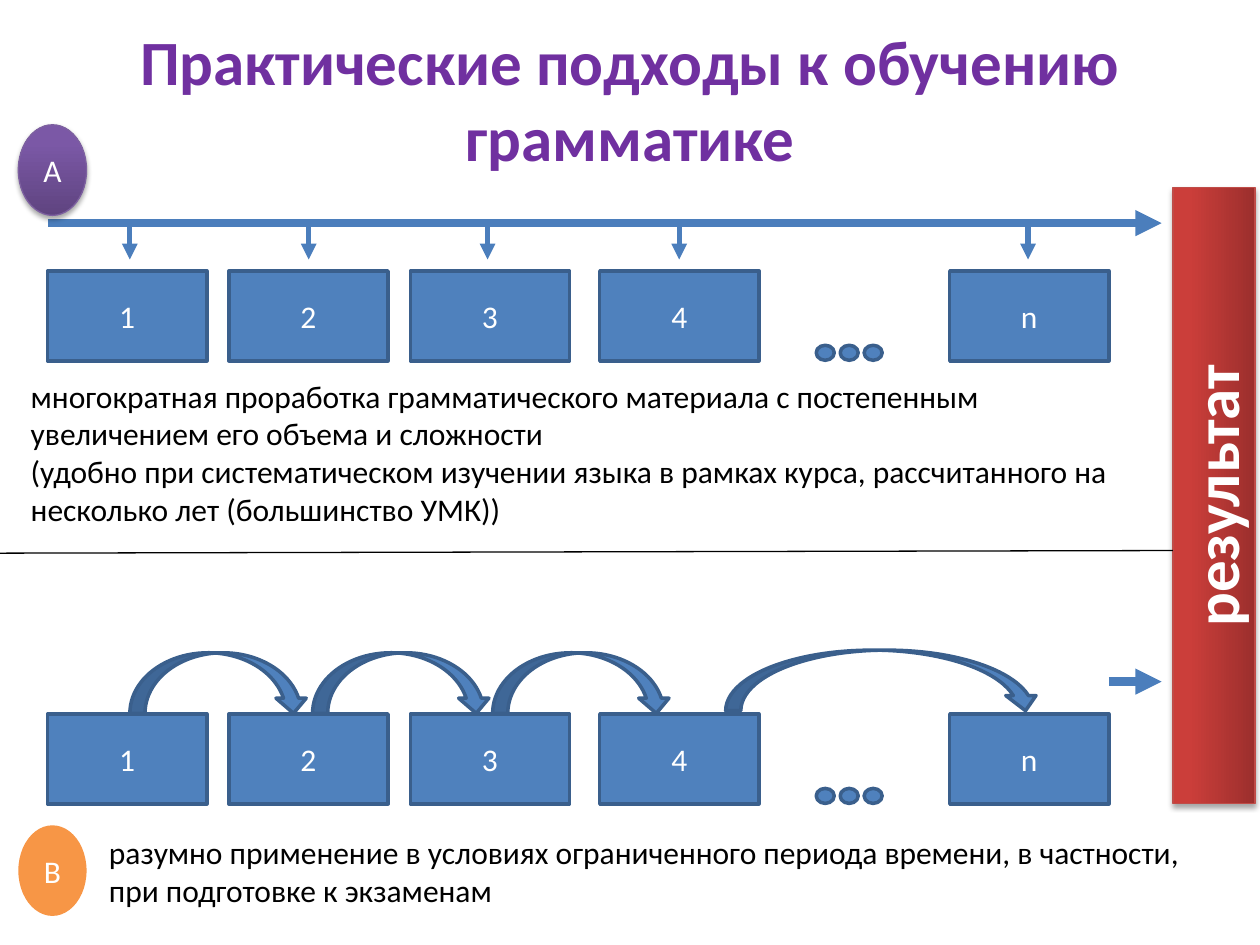
from lxml.etree import SubElement
from pptx import Presentation
from pptx.dml.color import RGBColor
from pptx.enum.shapes import MSO_CONNECTOR, MSO_SHAPE
from pptx.enum.text import MSO_ANCHOR, MSO_AUTO_SIZE, PP_ALIGN
from pptx.oxml.ns import qn
from pptx.util import Pt


def color(hex_string):
    return RGBColor.from_string(hex_string)


class SlideBuilder:
    font = "Calibri"
    blue, edge, arrow_blue = "4F81BD", "3A5F8C", "4B7EBC"

    def __init__(self, page):
        self.page = page

    def set_text(self, frame, text, size=18, ink="FFFFFF", bold=False, align=PP_ALIGN.CENTER):
        para = frame.paragraphs[0]
        para.text = text
        para.alignment = align
        para.font.name, para.font.size, para.font.bold = self.font, Pt(size), bold
        para.font.color.rgb = color(ink)

    def title(self, text, *bounds):
        title = self.page.shapes.title
        title.left, title.top, title.width, title.height = map(Pt, bounds)
        frame = title.text_frame
        frame.auto_size = MSO_AUTO_SIZE.NONE
        frame.vertical_anchor = MSO_ANCHOR.MIDDLE
        self.set_text(frame, text, 36, "7030A0", True)

    def shape(self, kind, *bounds, fill=blue, line=edge, weight=2, text="", **style):
        shape = self.page.shapes.add_shape(kind, *map(Pt, bounds))
        shape.shadow.inherit = False
        shape.fill.solid()
        shape.fill.fore_color.rgb = color(fill)
        if line:
            shape.line.color.rgb = color(line)
            shape.line.width = Pt(weight)
        else:
            shape.line.fill.background()
        if text:
            shape.text_frame.vertical_anchor = MSO_ANCHOR.MIDDLE
            self.set_text(shape.text_frame, text, **style)
        return shape

    def glossy(self, kind, *bounds, dark, light, line, **style):
        """Add a shape with an upward gradient and a soft shadow below it."""
        shape = self.shape(kind, *bounds, line=line, weight=0.75, **style)
        shape.fill.gradient()
        shape.fill.gradient_angle = 90
        for stop, tone, position in zip(shape.fill.gradient_stops, (dark, light), (0, 0.8)):
            stop.color.rgb = color(tone)
            stop.position = position
        effects = shape.element.spPr.find(qn("a:effectLst"))
        shadow = SubElement(effects, qn("a:outerShdw"), blurRad=str(Pt(3.1)),
                            dist=str(Pt(1.8)), dir="5400000", rotWithShape="0")
        tone = SubElement(shadow, qn("a:srgbClr"), val="000000")
        SubElement(tone, qn("a:alpha"), val="35000")
        return shape

    def line(self, *ends, ink=arrow_blue, weight=3, arrow=True):
        line = self.page.shapes.add_connector(MSO_CONNECTOR.STRAIGHT, *map(Pt, ends))
        line.line.color.rgb = color(ink)
        line.line.width = Pt(weight)
        properties = line.element.spPr
        if arrow:
            SubElement(properties.find(qn("a:ln")), qn("a:tailEnd"), type="triangle")
        SubElement(properties, qn("a:effectLst"))

    def note(self, text, *bounds, wrap=True):
        box = self.page.shapes.add_textbox(*map(Pt, bounds))
        box.text_frame.word_wrap = wrap
        box.text_frame.auto_size = MSO_AUTO_SIZE.SHAPE_TO_FIT_TEXT
        self.set_text(box.text_frame, text, ink="000000", align=PP_ALIGN.LEFT)

    def step_row(self, top):
        """Add the numbered boxes with an ellipsis of dots before the last."""
        for label, left in zip("1234n", (27.2, 130.8, 234.5, 342.7, 542.7)):
            self.shape(MSO_SHAPE.RECTANGLE, left, top, 91, 51.4, text=label)
        for index in range(3):
            self.shape(MSO_SHAPE.OVAL, 466.4 + 13.7 * index, top + 42.5, 10.3, 8.6)


def main():
    deck = Presentation()
    deck.slide_width, deck.slide_height = Pt(720), Pt(540)
    slide = SlideBuilder(deck.slides.add_slide(deck.slide_layouts[5]))
    slide.title("Практические подходы к обучению грамматике", 49.7, 28.8, 620.6, 54.7)

    slide.step_row(154.8)
    axis = 127.5
    slide.line(27.4, axis, 663.8, axis, weight=5)
    for x in (74.2, 176.4, 278.6, 388.1, 587.5):
        slide.line(x, axis, x, 148.3)

    slide.step_row(408)
    for left, top, width in ((74.2, 373, 102.2), (178.6, 373, 102.2),
                             (281.5, 373, 102.2), (414.7, 371.5, 180)):
        slide.shape(MSO_SHAPE.CURVED_DOWN_ARROW, left, top, width, 34.6)
    slide.line(633.6, 389.5, 663.8, 389.5, weight=5)

    result = slide.glossy(MSO_SHAPE.RECTANGLE, 517.7, 259.9, 352, 46.8, dark="9C2F2D",
                          light="CB3E3A", line="BF4C48", text="результат", size=36, bold=True)
    result.rotation = 270
    slide.glossy(MSO_SHAPE.OVAL, 10.5, 71.3, 39, 51.8, dark="5F4480", light="7B58A6",
                 line="7D60A0", text="А")
    slide.shape(MSO_SHAPE.OVAL, 10.5, 471.6, 39, 51.8, fill="F79646", line=None, text="В")

    slide.note("многократная проработка грамматического материала с постепенным "
               "увеличением его объема и сложности\n"
               "(удобно при систематическом изучении языка в рамках курса, "
               "рассчитанного на несколько лет (большинство УМК))", 10.5, 211.7, 653, 94.3)
    slide.note("разумно применение в условиях ограниченного периода времени, в частности, \n"
               "при подготовке к экзаменам", 55.2, 472.3, 638, 51, wrap=False)
    slide.line(0, 316.1, 670.3, 314.6, ink="000000", weight=0.75, arrow=False)
    deck.save("out.pptx")


if __name__ == "__main__":
    main()
